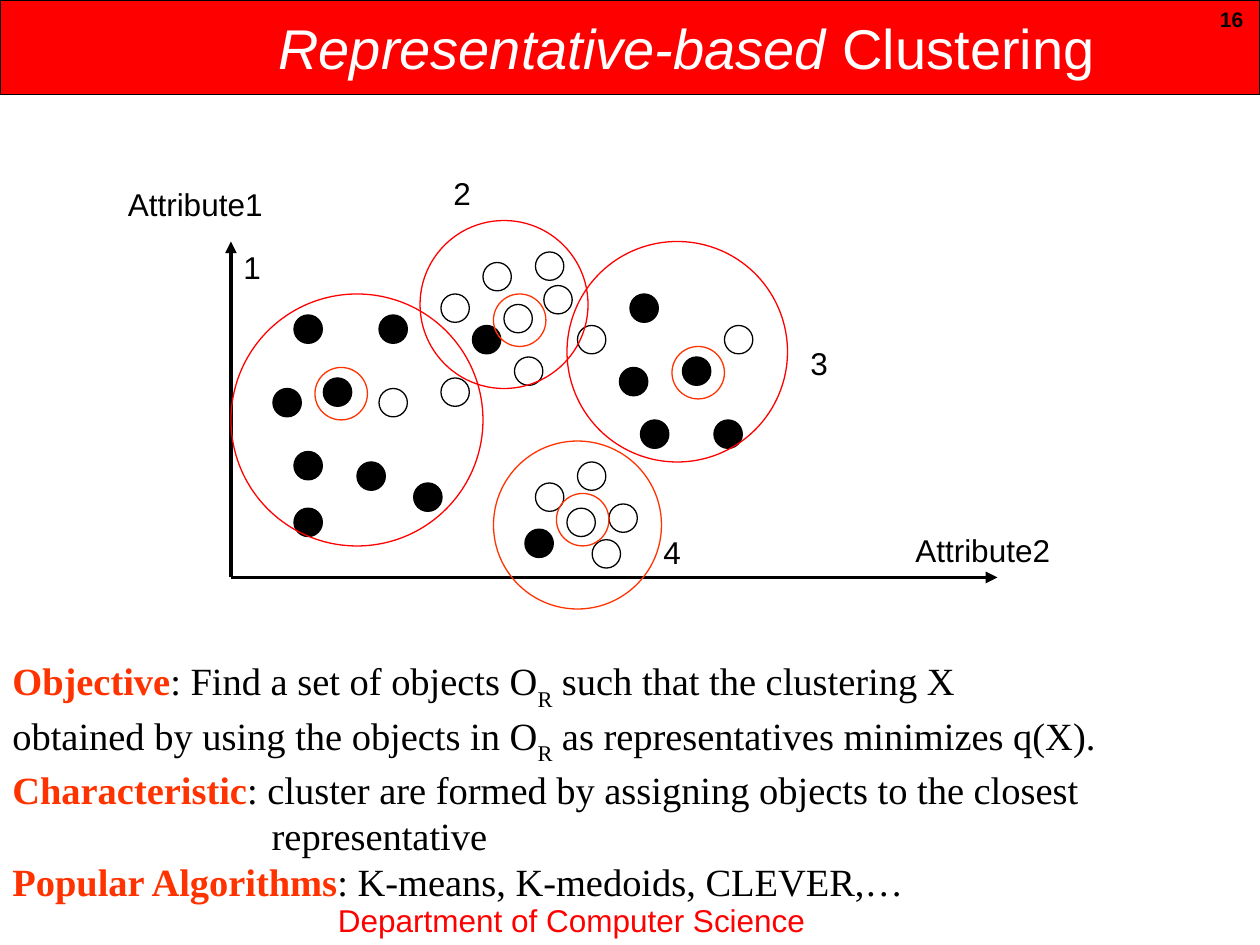
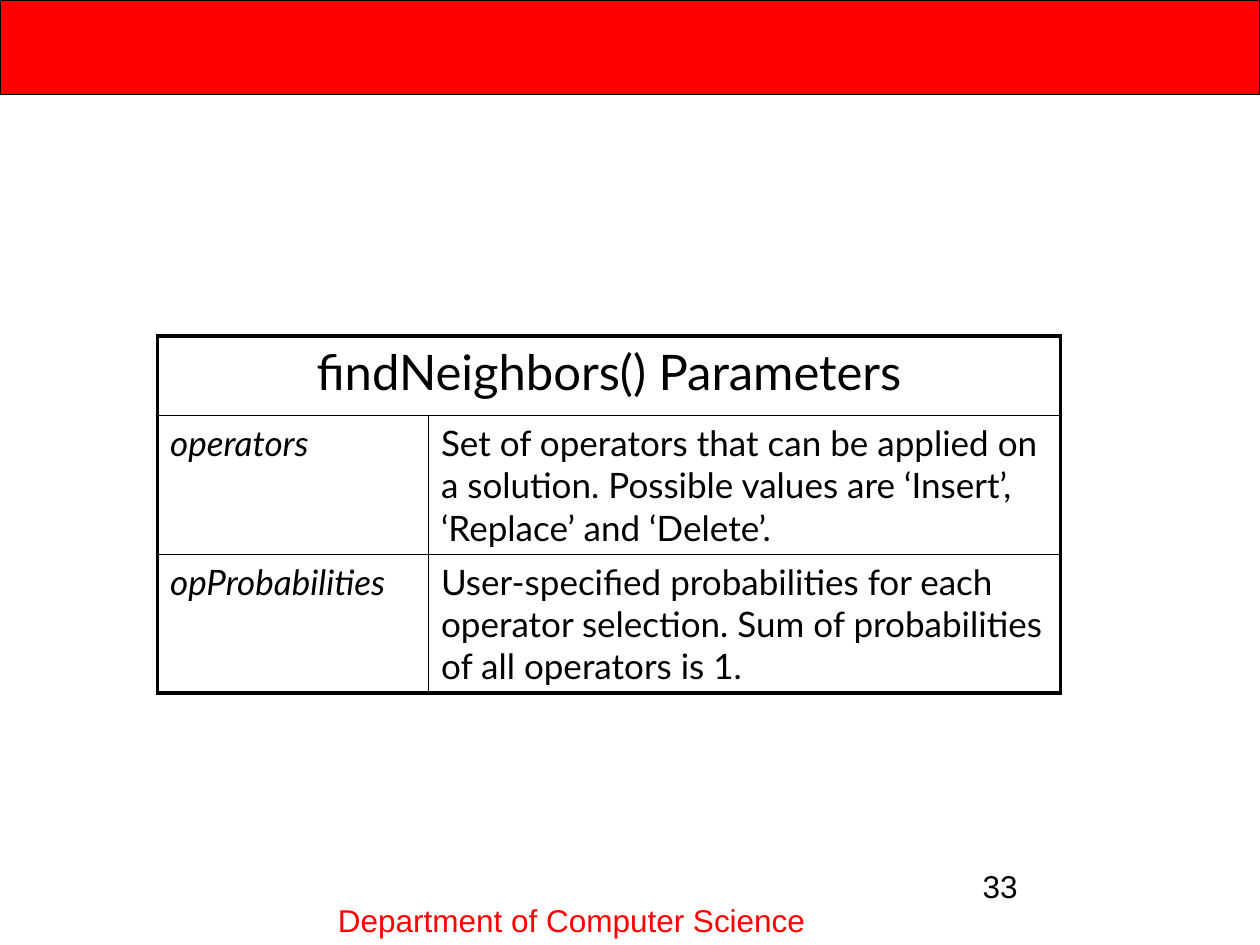
import lxml.etree
import pptx
import pptx.dml.color
import pptx.enum.shapes
import pptx.enum.text
import pptx.oxml.ns
import pptx.util

EMU_PER_PX = 7620  # 120 px to the inch
RED = pptx.dml.color.RGBColor(0xFF, 0x00, 0x00)
ORANGE = pptx.dml.color.RGBColor(0xFF, 0x33, 0x00)
BLACK = pptx.dml.color.RGBColor(0x00, 0x00, 0x00)
WHITE = pptx.dml.color.RGBColor(0xFF, 0xFF, 0xFF)

SHAPES = pptx.enum.shapes.MSO_SHAPE
ANCHOR = pptx.enum.text.MSO_ANCHOR
ALIGN = pptx.enum.text.PP_ALIGN
qn = pptx.oxml.ns.qn

TITLE = {"name": "Arial", "size": 32, "color": WHITE}
LABEL = {"name": "Arial", "size": 18, "color": BLACK}
FOOTER = LABEL | {"color": RED}
PAGE = LABEL | {"size": 12, "bold": True}
BODY = {"name": "Times New Roman", "size": 22, "color": BLACK}
TERM = {"color": ORANGE, "bold": True}
SUBSCRIPT = {"baseline": -30000}
HEADING = {"name": "Lato", "size": 28, "color": BLACK}
CELL = HEADING | {"size": 20}

DOT, RING = 27, 50
THICK, THIN = 2.25, 1


def px(length):
    return pptx.util.Emu(length * EMU_PER_PX)


class Deck:
    """Holds the shared style and the current slide."""

    def __init__(self):
        self.prs = pptx.Presentation()
        self.prs.slide_width, self.prs.slide_height = px(1200), px(900)
        self.slide = None

    def new_slide(self):
        self.slide = self.prs.slides.add_slide(self.prs.slide_layouts[6])
        self.shape(SHAPES.RECTANGLE, (0, 0, 1200, 90), BLACK, RED)
        self.text((310, 852, 490, 48), [["Department of Computer Science"]], FOOTER)

    def shape(self, kind, box, line, fill=None):
        shape = self.slide.shapes.add_shape(kind, *map(px, box))
        shape.shadow.inherit = False
        shape.line.color.rgb = line
        shape.line.width = pptx.util.Pt(0.75)
        if fill is None:
            shape.fill.background()
        else:
            shape.fill.solid()
            shape.fill.fore_color.rgb = fill

    def circle(self, left, top, size, line, fill=None):
        self.shape(SHAPES.OVAL, (left, top, size, size), line, fill)

    def arrow(self, start, end):
        arrow = self.slide.shapes.add_connector(
            pptx.enum.shapes.MSO_CONNECTOR.STRAIGHT, *map(px, start + end))
        arrow.line.color.rgb = BLACK
        arrow.line.width = pptx.util.Pt(THICK)
        lxml.etree.SubElement(arrow.line._get_or_add_ln(), qn("a:tailEnd"), type="triangle")
        lxml.etree.SubElement(arrow._element.spPr, qn("a:effectLst"))

    def add_runs(self, paragraph, runs, style):
        """Each run is a string, or a string with the formats that differ."""
        for item in runs:
            words, changes = (item, {}) if isinstance(item, str) else item
            run = paragraph.add_run()
            run.text = words
            for key, value in (style | changes).items():
                if key == "color":
                    run.font.color.rgb = value
                elif key == "baseline":
                    run._r.get_or_add_rPr().set("baseline", str(value))
                else:
                    setattr(run.font, key, pptx.util.Pt(value) if key == "size" else value)

    def text(self, box, lines, style, align=ALIGN.LEFT, anchor=ANCHOR.TOP):
        frame = self.slide.shapes.add_textbox(*map(px, box)).text_frame
        frame.word_wrap = True
        frame.vertical_anchor = anchor
        for number, runs in enumerate(lines):
            paragraph = frame.add_paragraph() if number else frame.paragraphs[0]
            paragraph.alignment = align
            self.add_runs(paragraph, runs, style)
        return frame

    def borders(self, cell, widths):
        properties = cell._tc.get_or_add_tcPr()
        for place, (side, width) in enumerate(widths.items()):
            line = lxml.etree.Element(qn(f"a:ln{side}"), w=str(pptx.util.Pt(width)))
            fill = lxml.etree.SubElement(line, qn("a:solidFill"))
            lxml.etree.SubElement(fill, qn("a:srgbClr"), val=str(BLACK))
            properties.insert(place, line)

    def table(self, left, top, columns, heights, heading, rows):
        table = self.slide.shapes.add_table(
            len(heights), len(columns),
            *map(px, (left, top, sum(columns), sum(heights)))).table
        table.first_row = table.horz_banding = False
        for column, width in zip(table.columns, columns):
            column.width = px(width)
        for row, height in zip(table.rows, heights):
            row.height = px(height)
        table.cell(0, 0).merge(table.cell(0, len(columns) - 1))

        last_row, last_column = len(heights) - 1, len(columns) - 1
        for r in range(len(heights)):
            for c in range(len(columns)):
                cell = table.cell(r, c)
                cell.fill.background()
                self.borders(cell, {
                    "L": THICK if r == 0 or c == 0 else THIN,
                    "R": THICK if r == 0 or c == last_column else THIN,
                    "T": THICK if r == 0 else THIN,
                    "B": THICK if r == last_row else THIN})
                if r:
                    style = CELL | {"italic": c == 0}
                    self.add_runs(cell.text_frame.paragraphs[0], [rows[r - 1][c]], style)
        title = table.cell(0, 0).text_frame.paragraphs[0]
        title.alignment = ALIGN.CENTER
        self.add_runs(title, [heading], HEADING)


# Label, its place, outline (left, top, size), outline colour, ring, black and white objects
CLUSTERS = [
    ("1", (220, 230), (220, 280, 240), RED, (300, 350),
     [(280, 300), (308, 360), (280, 430), (361, 300), (340, 440), (394, 460),
      (280, 484), (260, 370)],
     [(420, 360), (361, 370)]),
    ("2", (420, 160), (400, 210, 160), RED, (470, 280),
     [(450, 310)],
     [(460, 250), (480, 290), (510, 240), (490, 340), (518, 272), (420, 280)]),
    ("3", (760, 322), (540, 230, 210), RED, (640, 330),
     [(610, 400), (650, 340), (590, 350), (680, 400), (600, 280)],
     [(550, 310), (690, 310)]),
    ("4", (620, 502), (470, 420, 160), ORANGE, (530, 470),
     [(500, 504)],
     [(550, 440), (510, 460), (580, 480), (564, 514), (540, 484)]),
]

SUMMARY = [
    [("Objective", TERM), ": Find a set of objects O", ("R", SUBSCRIPT),
     " such that the clustering X"],
    ["obtained by using the objects in O", ("R", SUBSCRIPT),
     " as representatives minimizes q(X)."],
    [("Characteristic", TERM), ": cluster are formed by assigning objects to the closest"],
    ["representative"],
    [("Popular Algorithms", TERM), ": K-means, K-medoids, CLEVER,…"],
]

PARAMETERS = [
    ("operators", "Set of operators that can be applied on a solution. "
     "Possible values are ‘Insert’, ‘Replace’ and ‘Delete’."),
    ("opProbabilities", "User-specified probabilities for each operator selection. "
     "Sum of probabilities of all operators is 1."),
]


def clustering_slide(deck):
    deck.new_slide()
    deck.text((108, 0, 1092, 90),
              [[("Representative-based ", {"italic": True}), "Clustering"]],
              TITLE, ALIGN.CENTER, ANCHOR.MIDDLE)
    deck.text((1150, 0, 50, 36), [["16"]], PAGE)

    # Axes
    origin = (220, 550)
    deck.arrow(origin, (220, 230))
    deck.arrow(origin, (950, 550))
    deck.text((110, 170, 170, 48), [["Attribute1"]], LABEL)
    deck.text((860, 500, 170, 48), [["Attribute2"]], LABEL)

    # Objects, then the cluster outlines and representatives
    for *_, black, white in CLUSTERS:
        for place in black:
            deck.circle(*place, DOT, BLACK, BLACK)
        for place in white:
            deck.circle(*place, DOT, BLACK)
    for label, place, outline, color, ring, *_ in CLUSTERS:
        deck.circle(*outline, color)
        deck.circle(*ring, RING, ORANGE)
        deck.text((*place, 160, 48), [[label]], LABEL)

    # Summary, with the continued line indented
    summary = deck.text((0, 620, 1100, 250), SUMMARY, BODY)
    summary.paragraphs[3]._p.get_or_add_pPr().set("marL", str(px(247)))


def parameters_slide(deck):
    deck.new_slide()
    deck.text((924, 820, 250, 60), [["33"]], LABEL)
    deck.table(150, 320, (258, 602), (76, 132, 132),
               "findNeighbors() Parameters", PARAMETERS)


def main():
    deck = Deck()
    clustering_slide(deck)
    parameters_slide(deck)
    deck.prs.save("out.pptx")


if __name__ == "__main__":
    main()
